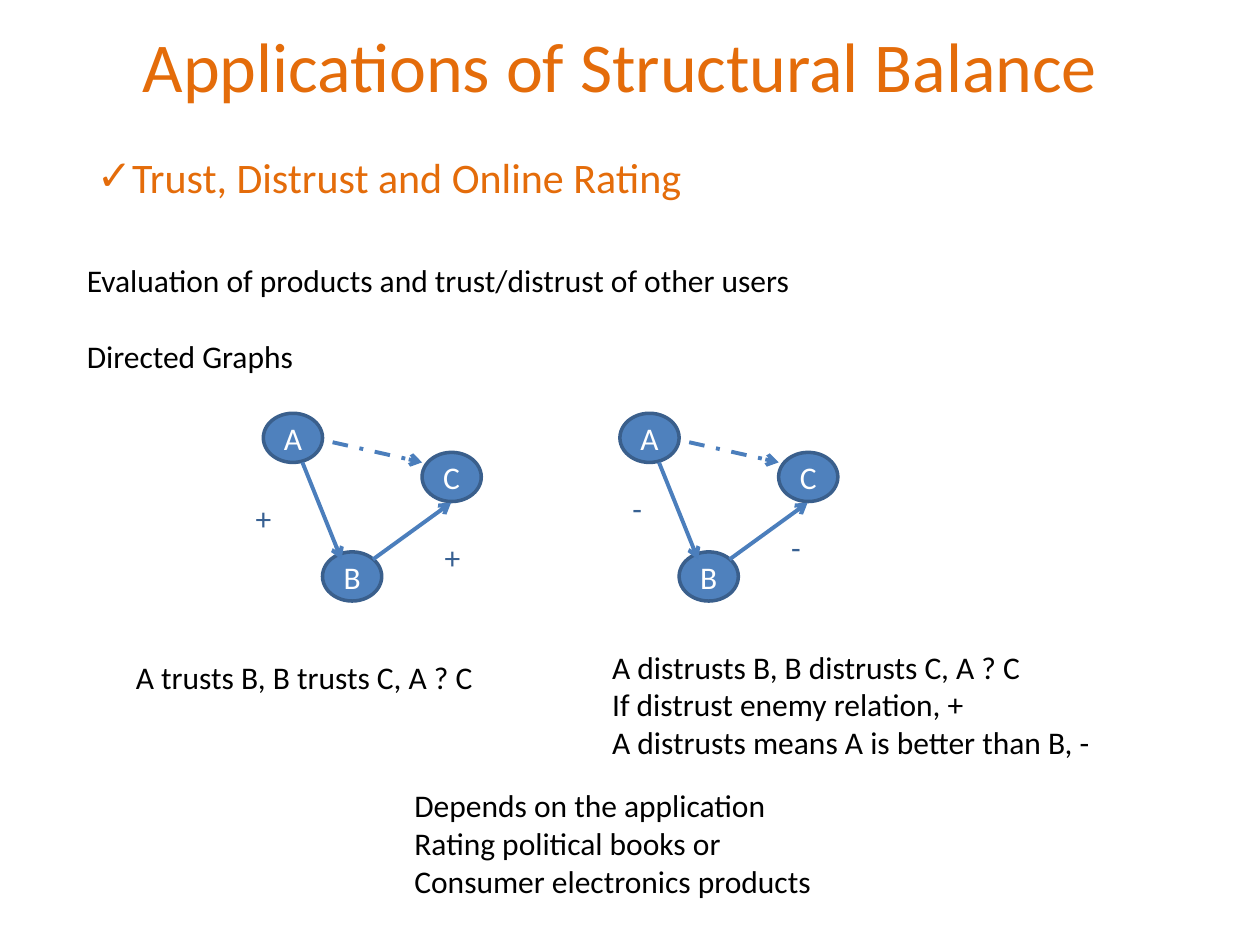
from lxml.etree import SubElement
from pptx import Presentation
from pptx.dml.color import RGBColor
from pptx.enum.dml import MSO_LINE_DASH_STYLE as Dash
from pptx.enum.shapes import MSO_CONNECTOR as Connector, MSO_SHAPE as Shape
from pptx.enum.text import MSO_ANCHOR as Anchor, MSO_AUTO_SIZE as AutoSize, PP_ALIGN as Align
from pptx.oxml.ns import qn
from pptx.util import Inches, Pt

ORANGE = RGBColor(0xE4, 0x6C, 0x0A)
BLACK = RGBColor(0, 0, 0)
WHITE = RGBColor(0xFF, 0xFF, 0xFF)
NODE_FILL = RGBColor(0x4F, 0x81, 0xBD)
NODE_EDGE = RGBColor(0x3A, 0x5F, 0x8C)
ARROW = RGBColor(0x4B, 0x7E, 0xBC)
SIGN = RGBColor(0x37, 0x60, 0x92)

FONT = "Calibri"
COLUMNS, ROWS = 100, 75
NODE_SIZE = (4.7, 3.9)
SIGN_SIZE = (3.1, 4)


def write(frame, text, size=18, color=BLACK, align=Align.LEFT, gap=0):
    for index, line in enumerate(text.split("\n")):
        paragraph = frame.add_paragraph() if index else frame.paragraphs[0]
        paragraph.alignment = align
        if index and gap:
            paragraph.space_before = Pt(gap)
        run = paragraph.add_run()
        run.text = line
        run.font.name = FONT
        run.font.size = Pt(size)
        run.font.color.rgb = color


class Canvas:
    def __init__(self, presentation):
        self.slide = presentation.slides.add_slide(presentation.slide_layouts[6])
        self.shapes = self.slide.shapes
        self.column = presentation.slide_width / COLUMNS
        self.row = presentation.slide_height / ROWS

    def grid(self, *lengths):
        units = (self.column, self.row)
        return [round(length * units[i % 2]) for i, length in enumerate(lengths)]

    def text(self, box, text, bullet=None, **style):
        frame = self.shapes.add_textbox(*self.grid(*box)).text_frame
        frame.word_wrap = True
        frame.auto_size = AutoSize.SHAPE_TO_FIT_TEXT
        write(frame, text, **style)
        if bullet:
            properties = frame.paragraphs[0]._p.get_or_add_pPr()
            indent = Inches(0.28)
            properties.set("marL", str(indent))
            properties.set("indent", str(-indent))
            SubElement(properties, qn("a:buFont")).set("typeface", FONT)
            SubElement(properties, qn("a:buChar")).set("char", bullet)

    def node(self, x, y, letter):
        node = self.shapes.add_shape(Shape.OVAL, *self.grid(x, y, *NODE_SIZE))
        node.shadow.inherit = False
        node.fill.solid()
        node.fill.fore_color.rgb = NODE_FILL
        node.line.color.rgb = NODE_EDGE
        node.line.width = Pt(2)
        frame = node.text_frame
        frame.margin_left = frame.margin_right = 0
        frame.margin_top = frame.margin_bottom = 0
        frame.vertical_anchor = Anchor.MIDDLE
        write(frame, letter, color=WHITE, align=Align.CENTER)

    def arrow(self, start, end, dash=None):
        arrow = self.shapes.add_connector(Connector.STRAIGHT, *self.grid(*start, *end))
        arrow.line.color.rgb = ARROW
        arrow.line.width = Pt(2.25)
        if dash:
            arrow.line.dash_style = dash
        properties = arrow._element.spPr
        SubElement(properties.find(qn("a:ln")), qn("a:tailEnd")).set("type", "arrow")
        SubElement(properties, qn("a:effectLst"))

    def trust_graph(self, x, y, sign, sign_places):
        for letter, dx, dy in (("A", 0, 0), ("C", 12.6, 3.1), ("B", 4.7, 11)):
            self.node(x + dx, y + dy, letter)
        for start, end, dash in (
            ((3.1, 3.9), (6.2, 11.6), None),
            ((8.7, 11.6), (14.9, 7.1), None),
            ((5.5, 2.3), (12.6, 3.9), Dash.DASH_DOT),
        ):
            self.arrow((x + start[0], y + start[1]), (x + end[0], y + end[1]), dash)
        for dx, dy in sign_places:
            self.text((x + dx, y + dy, *SIGN_SIZE), sign, color=SIGN)


def main():
    presentation = Presentation()
    presentation.slide_width = Inches(10)
    presentation.slide_height = Inches(7.5)
    canvas = Canvas(presentation)

    canvas.text((5.9, 1.3, 86.6, 7.7), "Applications of Structural Balance",
                size=40, color=ORANGE, align=Align.CENTER)
    canvas.text((6.7, 11.5, 60.6, 5), "Trust, Distrust and Online Rating",
                bullet="✓", size=24, color=ORANGE)
    canvas.text((5.9, 20.2, 66.1, 10.1),
                "Evaluation of products and trust/distrust of other users\nDirected Graphs",
                gap=22)

    canvas.trust_graph(20.9, 32.8, "+", ((-1.6, 6.3), (13.4, 9.4)))
    canvas.trust_graph(49.2, 32.8, "-", ((0, 5.5), (12.6, 8.6)))

    canvas.text((9.8, 51.7, 33.9, 4), "A trusts B, B trusts C, A ? C")
    canvas.text((47.6, 50.9, 40.2, 10.1),
                "A distrusts B, B distrusts C, A ? C\n"
                "If distrust enemy relation, +\n"
                "A distrusts means A is better than B, -")
    canvas.text((31.9, 61.9, 48.8, 10.1),
                "Depends on the application\n"
                "Rating political books or\n"
                "Consumer electronics products")

    presentation.save("out.pptx")


if __name__ == "__main__":
    main()
